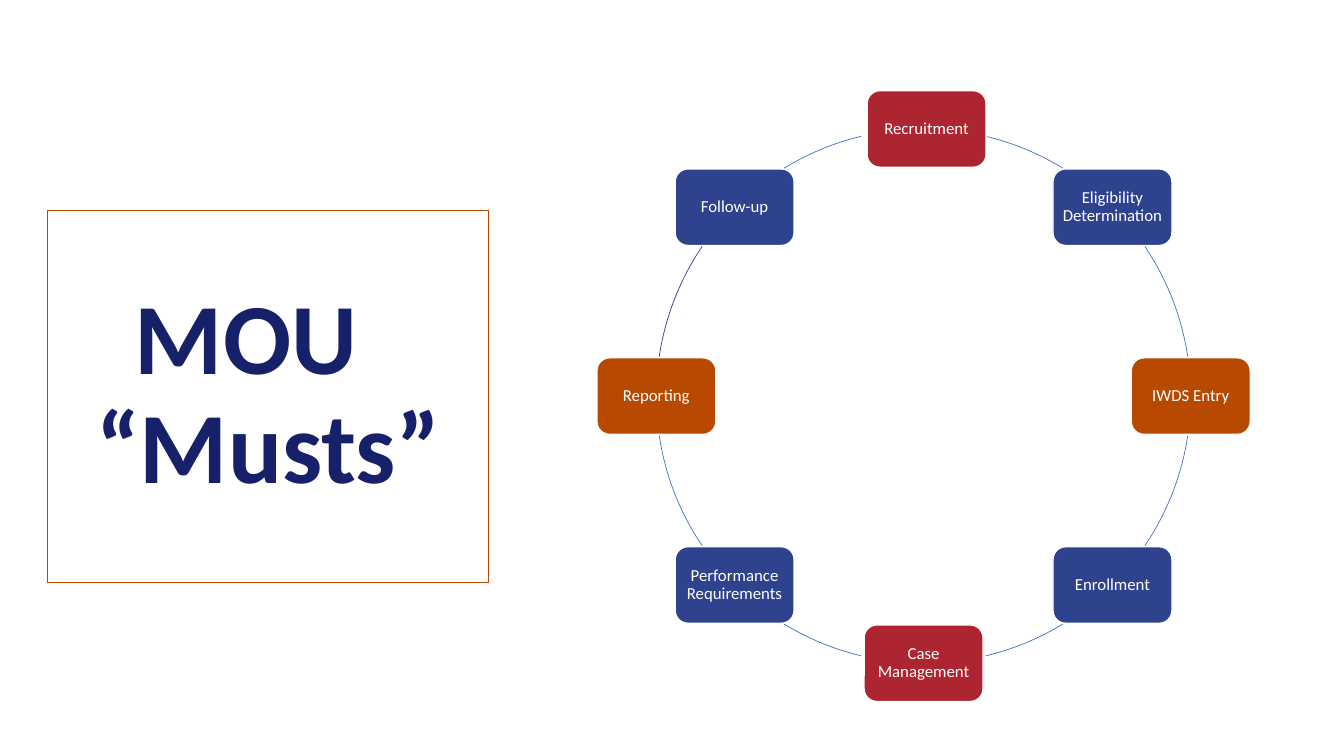
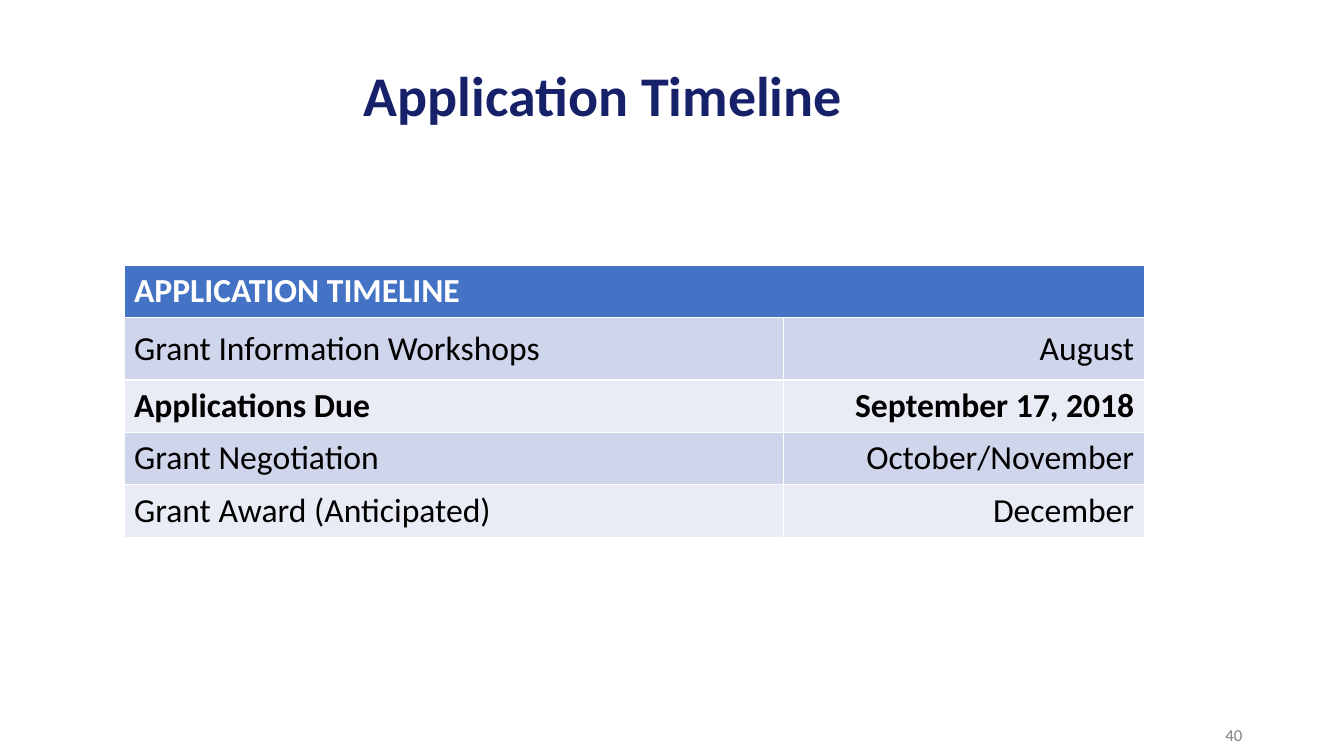
import math
from pptx import Presentation
from pptx.dml.color import RGBColor
from pptx.enum import shapes, text
from pptx.util import Inches, Pt

NAVY = RGBColor(0x17, 0x21, 0x69)
RED = RGBColor(0xAD, 0x25, 0x31)
INDIGO = RGBColor(0x2F, 0x42, 0x8E)
ORANGE = RGBColor(0xB7, 0x49, 0x00)
BLUE = RGBColor(0x44, 0x72, 0xC4)
BAND_DARK = RGBColor(0xCF, 0xD5, 0xEA)
BAND_LIGHT = RGBColor(0xE9, 0xEB, 0xF5)
GRAY = RGBColor(0x80, 0x80, 0x80)
WHITE = RGBColor(0xFF, 0xFF, 0xFF)
BLACK = RGBColor(0x00, 0x00, 0x00)
ALIGN = text.PP_ALIGN
MIDDLE = text.MSO_ANCHOR.MIDDLE


def format_paragraph(para, size, color, align, bold=False):
    para.alignment = align
    para.font.name = "Calibri"
    para.font.size = Pt(size)
    para.font.bold = bold
    para.font.color.rgb = color


def add_titled_page(deck, title, place, size, align):
    page = deck.slides.add_slide(deck.slide_layouts[5])
    box = page.shapes.title
    box.left, box.top, box.width, box.height = [Inches(n) for n in place]
    frame = box.text_frame
    frame.text = title
    frame.auto_size = text.MSO_AUTO_SIZE.NONE
    frame.vertical_anchor = MIDDLE
    for para in frame.paragraphs:
        para.line_spacing = 0.9
        format_paragraph(para, size, NAVY, align, bold=True)
    return page


deck = Presentation()
deck.slide_width, deck.slide_height = Inches(13.33), Inches(7.5)

page = add_titled_page(deck, "MOU\n“Musts”", (0.47, 2.09, 4.38, 3.69), 72, ALIGN.CENTER)
title = page.shapes.title
title.line.color.rgb = ORANGE
title.line.width = Pt(0.75)
title_shift = Inches(0.44)
title.text_frame.margin_left = 0
title.text_frame.margin_right = title_shift
title.text_frame.paragraphs[1]._p.get_or_add_pPr().set("marL", str(title_shift))

steps = [
    ("Recruitment", RED),
    ("Eligibility Determination", INDIGO),
    ("IWDS Entry", ORANGE),
    ("Enrollment", INDIGO),
    ("Case Management", RED),
    ("Performance Requirements", INDIGO),
    ("Reporting", ORANGE),
    ("Follow-up", INDIGO),
]
arc_gaps = [(13.5, 13.5), (10.9, 8.5), (8.5, 10.9), (13.5, 13.5)]
center_x, center_y, radius = 9.16, 3.93, 2.65
step_width, step_height = 1.18, 0.76
turn = 360 / len(steps)

for index, (label, color) in enumerate(steps):
    angle = index * turn - 90
    gap_after, gap_before = arc_gaps[index % len(arc_gaps)]
    arc = page.shapes.add_shape(
        shapes.MSO_SHAPE.ARC, Inches(center_x - radius), Inches(center_y - radius),
        Inches(2 * radius), Inches(2 * radius))
    arc.adjustments[0] = (angle + gap_after) % 360 * 0.6
    arc.adjustments[1] = (angle + turn - gap_before) % 360 * 0.6
    arc.shadow.inherit = False
    arc.fill.background()
    arc.line.color.rgb = INDIGO if label == "Reporting" else BLUE
    arc.line.width = Pt(0.5)

    nudge = 0.03 if index == 0 else 0
    left = center_x + nudge + radius * math.cos(math.radians(angle)) - step_width / 2
    top = center_y + radius * math.sin(math.radians(angle)) - step_height / 2
    box = page.shapes.add_shape(
        shapes.MSO_SHAPE.ROUNDED_RECTANGLE, Inches(left), Inches(top),
        Inches(step_width), Inches(step_height))
    box.shadow.inherit = False
    box.fill.solid()
    box.fill.fore_color.rgb = color
    box.line.color.rgb = WHITE
    box.line.width = Pt(1)
    frame = box.text_frame
    frame.text = label
    frame.word_wrap = True
    frame.vertical_anchor = MIDDLE
    frame.margin_left = frame.margin_right = Inches(0.05)
    frame.margin_top = frame.margin_bottom = Inches(0.05)
    frame.paragraphs[0].line_spacing = 0.9
    format_paragraph(frame.paragraphs[0], 12, WHITE, ALIGN.CENTER)

page = add_titled_page(deck, "Application Timeline", (3.51, 0.67, 8.33, 0.61), 40, ALIGN.LEFT)
timeline = [
    ("APPLICATION TIMELINE", ""),
    ("Grant Information Workshops", "August"),
    ("Applications Due", "September 17, 2018"),
    ("Grant Negotiation", "October/November"),
    ("Grant Award (Anticipated)", "December"),
]
table = page.shapes.add_table(
    len(timeline), 2, Inches(1.23), Inches(2.63), Inches(10.12), Inches(2.7)).table
table.columns[0].width = Inches(6.54)
table.columns[1].width = Inches(3.58)
for row, entries in enumerate(timeline):
    table.rows[row].height = Inches(0.62 if row == 1 else 0.52)
    header = row == 0
    fill = BLUE if header else BAND_DARK if row % 2 else BAND_LIGHT
    for column, entry in enumerate(entries):
        cell = table.cell(row, column)
        cell.fill.solid()
        cell.fill.fore_color.rgb = fill
        cell.text = entry
        if not header:
            cell.vertical_anchor = MIDDLE
        format_paragraph(
            cell.text_frame.paragraphs[0], 24, WHITE if header else BLACK,
            ALIGN.RIGHT if column else ALIGN.LEFT, bold=row in (0, 2))
table.cell(0, 0).merge(table.cell(0, 1))

number = page.shapes.add_textbox(Inches(9.42), Inches(7.09), Inches(3), Inches(0.4))
number.text_frame.text = "40"
number.text_frame.word_wrap = True
number.text_frame.vertical_anchor = MIDDLE
format_paragraph(number.text_frame.paragraphs[0], 12, GRAY, ALIGN.RIGHT)

deck.save("out.pptx")
